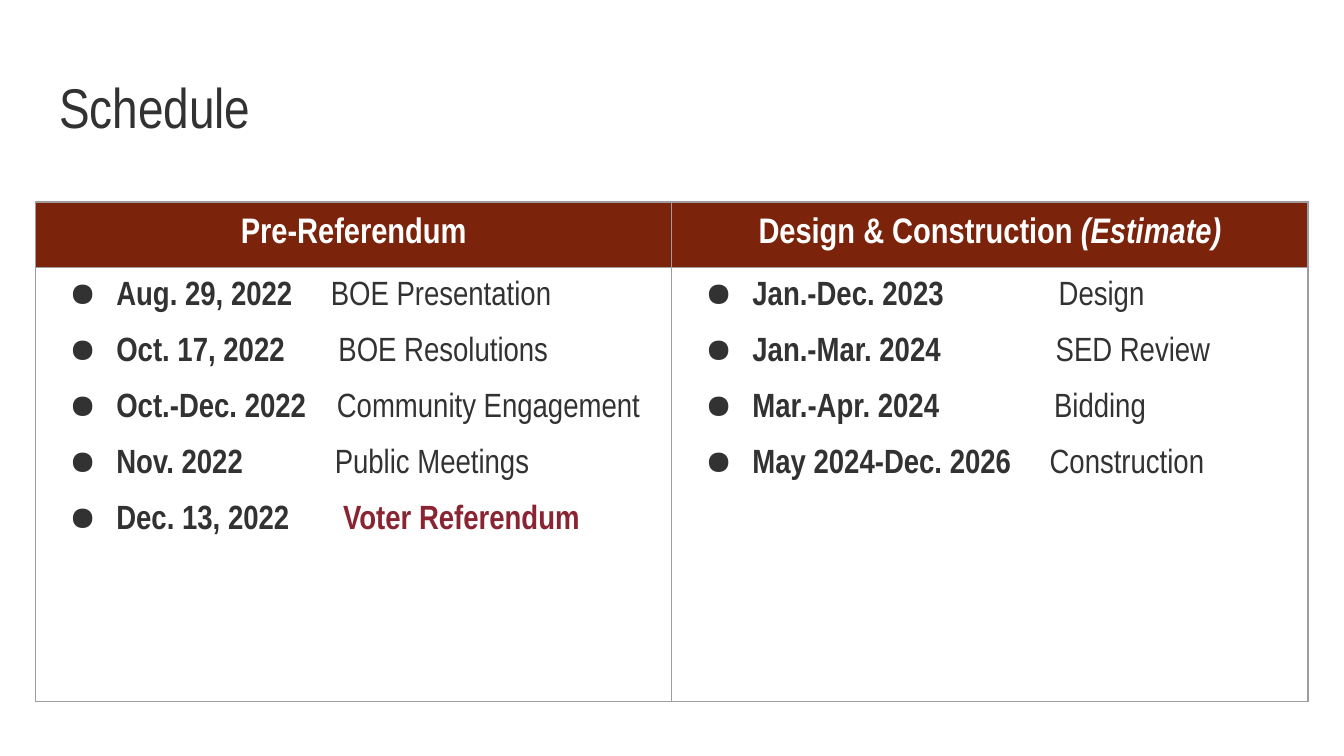
from lxml import etree
from pptx import Presentation
from pptx.dml.color import RGBColor
from pptx.enum import text
from pptx.oxml import ns
from pptx.util import Pt

COLORS = {
    "ink": "323232",
    "header": "7B230B",
    "header_text": "FFFFFF",
    "highlight": "8A2432",
    "border": "9E9E9E",
}
FONT = "Arial Narrow"
INSET = Pt(7.2)
SPACE_WIDTH = 4.1

PRE_REFERENDUM = [
    ("Aug. 29, 2022", 5, "BOE Presentation"),
    ("Oct. 17, 2022", 7, "BOE Resolutions"),
    ("Oct.-Dec. 2022", 4, "Community Engagement"),
    ("Nov. 2022", 12, "Public Meetings"),
    ("Dec. 13, 2022", 7, "Voter Referendum"),
]
CONSTRUCTION = [
    ("Jan.-Dec. 2023", 15, "Design"),
    ("Jan.-Mar. 2024", 15, "SED Review"),
    ("Mar.-Apr. 2024", 15, "Bidding"),
    ("May 2024-Dec. 2026", 5, "Construction"),
]


def format_run(run, size, color, bold=False, italic=False):
    font = run.font
    font.name = FONT
    font.size = Pt(size)
    font.bold = bold
    font.italic = italic
    font.color.rgb = RGBColor.from_string(COLORS[color])


def add_run(paragraph, wording, size, color, bold=False, italic=False):
    run = paragraph.add_run()
    run.text = wording
    format_run(run, size, color, bold, italic)
    return run


def add_color(parent, color):
    etree.SubElement(parent, ns.qn("a:srgbClr"), val=COLORS[color])


def add_bullet(paragraph):
    properties = paragraph._p.get_or_add_pPr()
    properties.set("marL", str(Pt(36)))
    properties.set("indent", str(Pt(-25.2)))
    add_color(etree.SubElement(properties, ns.qn("a:buClr")), "ink")
    etree.SubElement(properties, ns.qn("a:buChar"), char="●")


def add_borders(cell):
    properties = cell._tc.get_or_add_tcPr()
    for side in ("lnL", "lnR", "lnT", "lnB"):
        line = etree.SubElement(properties, ns.qn(f"a:{side}"), w=str(Pt(0.75)))
        add_color(etree.SubElement(line, ns.qn("a:solidFill")), "border")


def prepare_cell(cell, anchor):
    cell.margin_left = cell.margin_right = INSET
    cell.margin_top = cell.margin_bottom = INSET
    cell.vertical_anchor = anchor
    add_borders(cell)


def fill_header(cell, heading, remark=""):
    prepare_cell(cell, text.MSO_ANCHOR.MIDDLE)
    cell.fill.solid()
    cell.fill.fore_color.rgb = RGBColor.from_string(COLORS["header"])
    paragraph = cell.text_frame.paragraphs[0]
    paragraph.alignment = text.PP_ALIGN.CENTER
    add_run(paragraph, heading, 19, "header_text", bold=True)
    if remark:
        add_run(paragraph, remark, 19, "header_text", bold=True, italic=True)


def fill_schedule(cell, milestones, highlighted=None):
    prepare_cell(cell, text.MSO_ANCHOR.TOP)
    cell.fill.background()
    frame = cell.text_frame
    for index, (date, gap, event) in enumerate(milestones):
        paragraph = frame.add_paragraph() if index else frame.paragraphs[0]
        paragraph.space_before = Pt(13.1 if index else 0)
        add_bullet(paragraph)
        add_run(paragraph, date, 18, "ink", bold=True)
        spacer = add_run(paragraph, " ", 18, "ink")
        spacing = round((gap - 1) * SPACE_WIDTH * 100)
        spacer._r.get_or_add_rPr().set("spc", str(spacing))
        special = event == highlighted
        add_run(paragraph, event, 18, "highlight" if special else "ink", bold=special)


def add_title(slide, wording):
    title = slide.shapes.title
    title.left, title.top, title.width, title.height = Pt(24.5), Pt(24.5), Pt(671), Pt(57.6)
    frame = title.text_frame
    frame.text = wording
    frame.word_wrap = True
    frame.auto_size = text.MSO_AUTO_SIZE.NONE
    frame.vertical_anchor = text.MSO_ANCHOR.BOTTOM
    frame.margin_left = frame.margin_right = INSET
    frame.margin_top = frame.margin_bottom = INSET
    paragraph = frame.paragraphs[0]
    paragraph.alignment = text.PP_ALIGN.LEFT
    format_run(paragraph.runs[0], 30, "ink")


def add_schedule_table(slide):
    table = slide.shapes.add_table(2, 2, Pt(19.1), Pt(108.2), Pt(681.6), Pt(267.8)).table
    table.horz_banding = False
    table.rows[0].height = Pt(35.2)
    table.rows[1].height = Pt(232.6)
    for column in table.columns:
        column.width = Pt(340.8)
    fill_header(table.cell(0, 0), "Pre-Referendum")
    fill_header(table.cell(0, 1), "Design & Construction ", "(Estimate)")
    fill_schedule(table.cell(1, 0), PRE_REFERENDUM, "Voter Referendum")
    fill_schedule(table.cell(1, 1), CONSTRUCTION)


def main():
    deck = Presentation()
    deck.slide_width, deck.slide_height = Pt(720), Pt(405)
    slide = deck.slides.add_slide(deck.slide_layouts[5])
    add_title(slide, "Schedule")
    add_schedule_table(slide)
    deck.save("out.pptx")


if __name__ == "__main__":
    main()
